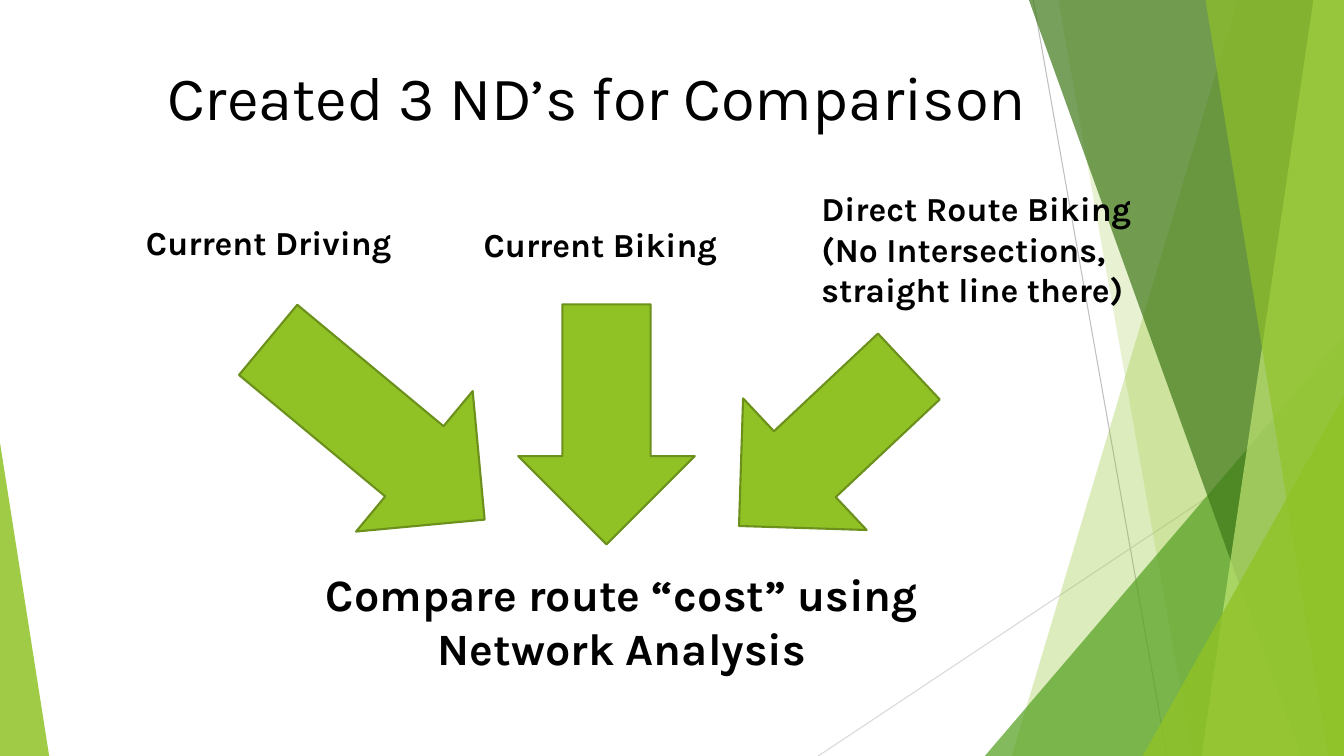
from dataclasses import dataclass

from lxml.etree import SubElement
from pptx import Presentation
from pptx.dml.color import RGBColor
from pptx.enum.shapes import MSO_CONNECTOR, MSO_SHAPE
from pptx.enum.text import PP_ALIGN
from pptx.oxml.ns import qn
from pptx.util import Cm, Pt


@dataclass(frozen=True)
class Theme:
    font: str = "Karla"
    text: str = "000000"
    lime: str = "90C226"
    green: str = "54A021"
    forest: str = "3F7819"
    pale: str = "C0E474"
    outline: str = "6B901C"
    line_dark: str = "BFBFBF"
    line_light: str = "D9D9D9"
    title_size: int = 44
    label_size: int = 24
    result_size: int = 32


theme = Theme()
WIDTH, HEIGHT = 33.87, 19.05

presentation = Presentation()
presentation.slide_width, presentation.slide_height = Cm(WIDTH), Cm(HEIGHT)
slide = presentation.slides.add_slide(presentation.slide_layouts[6])
shapes = slide.shapes


def paint(shape, color, opacity=100):
    """Fill a shape without line or shadow, at the given opacity in percent."""
    shape.shadow.inherit = False
    shape.line.fill.background()
    shape.fill.solid()
    shape.fill.fore_color.rgb = RGBColor.from_string(color)
    if opacity < 100:
        color_element = shape.fill._xPr.find(qn("a:solidFill"))[0]
        SubElement(color_element, qn("a:alpha")).set("val", str(opacity * 1000))


def add_text(text, left, top, width, height, size, bold=True, align=PP_ALIGN.LEFT):
    box = shapes.add_textbox(Cm(left), Cm(top), Cm(width), Cm(height))
    box.text_frame.word_wrap = True
    box.text_frame.text = text
    for paragraph in box.text_frame.paragraphs:
        paragraph.alignment = align
        font = paragraph.runs[0].font
        font.name, font.size, font.bold = theme.font, Pt(size), bold
        font.color.rgb = RGBColor.from_string(theme.text)


# Thin background lines
for x1, y1, x2, color in [
    (26.04, 0, 29.41, theme.line_dark),
    (WIDTH, 10.24, 20.62, theme.line_light),
]:
    connector = shapes.add_connector(
        MSO_CONNECTOR.STRAIGHT, Cm(x1), Cm(y1), Cm(x2), Cm(HEIGHT))
    connector.line.color.rgb = RGBColor.from_string(color)
    connector.line.width = Pt(0.75)
    SubElement(connector._element.spPr, qn("a:effectLst"))

# Facets: bands run from a slanted left side to the right edge of the slide,
# triangles stand on its bottom edge
facets = [
    ("band", 31.19, 25.5, theme.lime, 30),
    ("band", 26.67, 30.05, theme.lime, 20),
    ("triangle", 24.82, 9.05, 10.59, 1, theme.green, 72),
    ("band", 25.93, 32.79, theme.forest, 70),
    ("band", 33.1, 30.28, theme.pale, 70),
    ("band", 30.38, 33.48, theme.lime, 65),
    ("triangle", 28.8, 5.07, 9.07, 1, theme.lime, 80),
    ("triangle", 0, 1.24, 7.9, 0, theme.lime, 85),
]
for kind, *geometry, color, opacity in facets:
    if kind == "band":
        top_x, bottom_x = geometry
        builder = shapes.build_freeform(Cm(top_x), 0)
        builder.add_line_segments([
            (Cm(WIDTH), 0), (Cm(WIDTH), Cm(HEIGHT)), (Cm(bottom_x), Cm(HEIGHT))])
        facet = builder.convert_to_shape()
    else:
        left, width, height, apex = geometry
        facet = shapes.add_shape(
            MSO_SHAPE.ISOSCELES_TRIANGLE,
            Cm(left), Cm(HEIGHT - height), Cm(width), Cm(height))
        facet.adjustments[0] = apex
    paint(facet, color, opacity)

# Title and the three network datasets
add_text("Created 3 ND’s for Comparison", 3.96, 1.37, 25.58, 2.13,
         theme.title_size, bold=False)
for label, left, top, width, height in [
    ("Current Driving", 3.43, 5.46, 8.51, 1.27),
    ("Current Biking", 11.94, 5.51, 10.92, 1.27),
    ("Direct Route Biking\n(No Intersections, straight line there)",
     20.45, 4.62, 9.75, 3.33),
]:
    add_text(label, left, top, width, height, theme.label_size)

# Arrows leading to the comparison
for preset, left, top, width, height, rotation in [
    (MSO_SHAPE.DOWN_ARROW, 13.06, 7.67, 4.45, 6.05, 0),
    (MSO_SHAPE.RIGHT_ARROW, 5.94, 8.53, 7.09, 4.6, 39.7),
    (MSO_SHAPE.LEFT_ARROW, 17.83, 8.97, 5.87, 4.55, 316.8),
]:
    arrow = shapes.add_shape(preset, Cm(left), Cm(top), Cm(width), Cm(height))
    arrow.rotation = rotation
    paint(arrow, theme.lime)
    arrow.line.color.rgb = RGBColor.from_string(theme.outline)
    arrow.line.width = Pt(1.5)

# Result
add_text("Compare route “cost” using\nNetwork Analysis", 5.14, 14.15, 21.08, 3,
         theme.result_size, align=PP_ALIGN.CENTER)

presentation.save("out.pptx")
